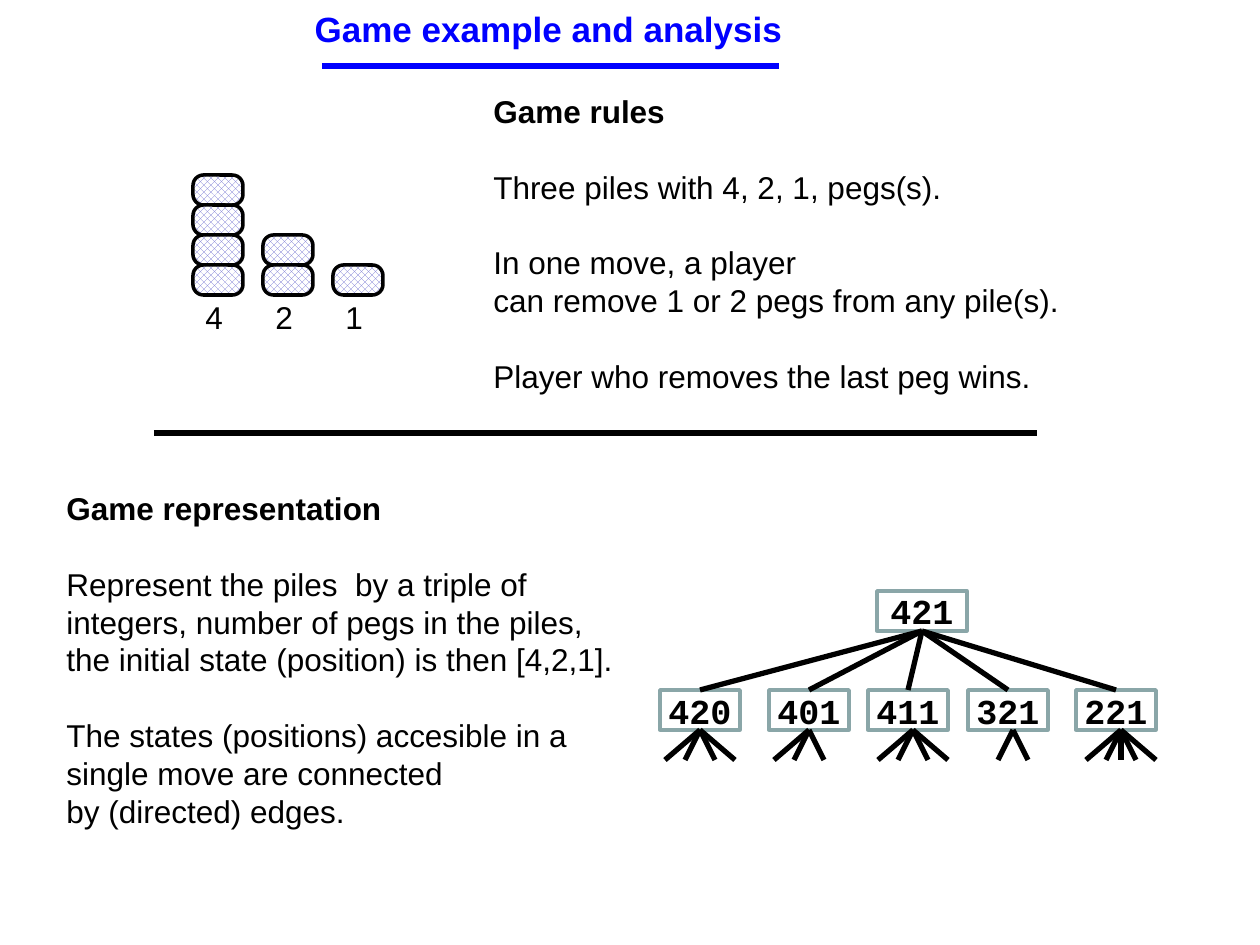
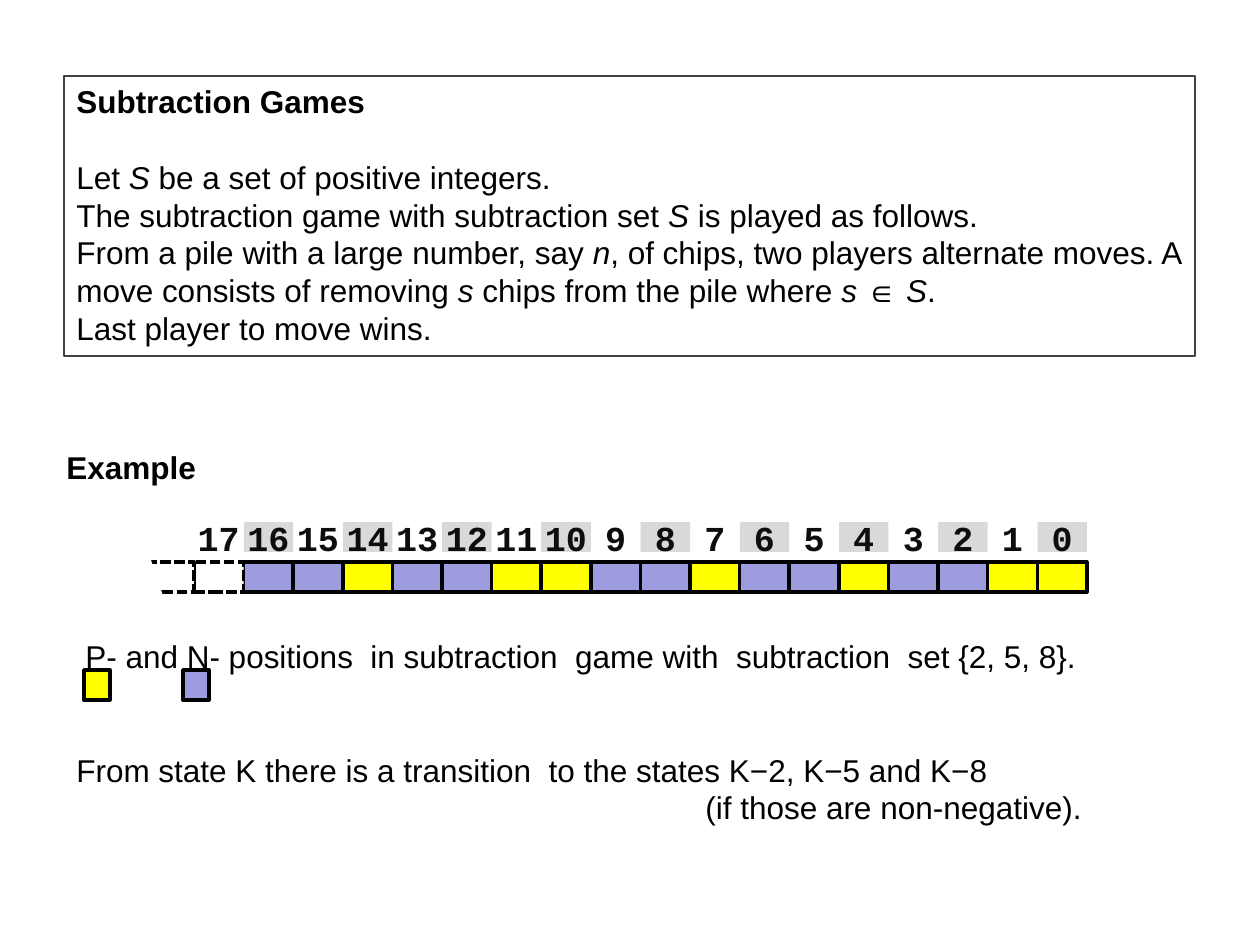
import dataclasses
import pptx
import pptx.dml.color
import pptx.enum.dml
import pptx.enum.shapes
import pptx.enum.text
import pptx.oxml
import pptx.oxml.ns
import pptx.util

SHAPE = pptx.enum.shapes.MSO_SHAPE
ANCHOR = pptx.enum.text.MSO_ANCHOR
ALIGN = pptx.enum.text.PP_ALIGN


@dataclasses.dataclass(frozen=True)
class Theme:
    text_font: str = "Arial"
    number_font: str = "Courier New"
    body_size: int = 18
    title_size: int = 20
    number_size: int = 20
    leading: float = 1.2
    ink: str = "000000"
    paper: str = "FFFFFF"
    title: str = "0000FF"
    node_border: str = "8AA6A8"
    peg_hatch: str = "7575D1"
    frame: str = "404040"
    number: str = "0D0D0D"
    even_label: str = "D9D9D9"
    p_position: str = "FFFF00"
    n_position: str = "9C9CDF"
    rule_width: float = 3
    outline_width: float = 2
    frame_width: float = 0.75


@dataclasses.dataclass(frozen=True)
class Run:
    text: str
    bold: bool = False
    italic: bool = False


@dataclasses.dataclass(frozen=True)
class Paragraph:
    runs: tuple
    lines_before: int = 0
    indent: int = 0


THEME = Theme()
PX_PER_INCH = 126


def px(length):
    return pptx.util.Emu(round(length * 914400 / PX_PER_INCH))


def box_px(*lengths):
    return [px(length) for length in lengths]


def rgb(value):
    return pptx.dml.color.RGBColor.from_string(value)


def plain(text, lines_before=0, indent=0):
    return Paragraph((Run(text),), lines_before, indent)


def heading(text):
    return Paragraph((Run(text, bold=True),))


def style_run(run, font, size, color, bold=False, italic=False):
    run.font.name = font
    run.font.size = pptx.util.Pt(size)
    run.font.color.rgb = rgb(color)
    run.font.bold = bold
    run.font.italic = italic


def write(frame, paragraphs, size=THEME.body_size, color=THEME.ink):
    frame.word_wrap = True
    frame.auto_size = pptx.enum.text.MSO_AUTO_SIZE.NONE
    frame.vertical_anchor = ANCHOR.TOP
    frame.margin_left = frame.margin_right = pptx.util.Inches(0.1)
    frame.margin_top = frame.margin_bottom = pptx.util.Inches(0.05)
    line_height = size * THEME.leading
    for index, content in enumerate(paragraphs):
        paragraph = frame.add_paragraph() if index else frame.paragraphs[0]
        paragraph.alignment = ALIGN.LEFT
        paragraph.line_spacing = pptx.util.Pt(line_height)
        paragraph.space_before = pptx.util.Pt(line_height * content.lines_before)
        if content.indent:
            paragraph._p.get_or_add_pPr().set("marL", str(px(content.indent)))
        for part in content.runs:
            run = paragraph.add_run()
            run.text = part.text
            style_run(run, THEME.text_font, size, color, part.bold, part.italic)


def add_text(slide, box, paragraphs):
    write(slide.shapes.add_textbox(*box_px(*box)).text_frame, paragraphs)


def add_outlined(slide, kind, box, fill=None, line=None, width=THEME.outline_width):
    shape = slide.shapes.add_shape(kind, *box_px(*box))
    shape.shadow.inherit = False
    if fill:
        shape.fill.solid()
        shape.fill.fore_color.rgb = rgb(fill)
    else:
        shape.fill.background()
    if line:
        shape.line.color.rgb = rgb(line)
        shape.line.width = pptx.util.Pt(width)
    else:
        shape.line.fill.background()
    return shape


def add_number(slide, box, number, color, fill, line=None):
    shape = add_outlined(slide, SHAPE.RECTANGLE, box, fill, line)
    frame = shape.text_frame
    frame.margin_left = frame.margin_right = frame.margin_top = frame.margin_bottom = 0
    frame.vertical_anchor = ANCHOR.MIDDLE
    frame.paragraphs[0].alignment = ALIGN.CENTER
    run = frame.paragraphs[0].add_run()
    run.text = str(number)
    style_run(run, THEME.number_font, THEME.number_size, color, bold=True)


def add_rule(slide, start, end, color=THEME.ink):
    rule = slide.shapes.add_connector(
        pptx.enum.shapes.MSO_CONNECTOR.STRAIGHT, *box_px(*start, *end))
    rule.line.color.rgb = rgb(color)
    rule.line.width = pptx.util.Pt(THEME.rule_width)
    properties = rule._element.spPr
    properties.append(properties.makeelement(pptx.oxml.ns.qn("a:effectLst"), {}))


def add_title(slide, box, text):
    left, top, width, height = box
    title = slide.shapes.title
    title.left, title.top, title.width, title.height = box_px(*box)
    write(title.text_frame, [heading(text)], THEME.title_size, THEME.title)
    add_rule(slide, (left + 20, top + 65), (left + 477, top + 65), THEME.title)


def add_piles(slide, box, piles):
    left, top, width, height = box
    peg_width, peg_height, pitch = 50, 30, 70
    ground = top + height
    for column, pegs in enumerate(piles):
        pile_left = left + column * pitch
        for level in range(pegs, 0, -1):
            peg = add_outlined(
                slide, SHAPE.ROUNDED_RECTANGLE,
                (pile_left, ground - level * peg_height, peg_width, peg_height),
                line=THEME.ink)
            peg.adjustments[0] = 0.35
            peg.fill.patterned()
            peg.fill.pattern = pptx.enum.dml.MSO_PATTERN.from_xml("openDmnd")
            peg.fill.fore_color.rgb = rgb(THEME.peg_hatch)
            peg.fill.back_color.rgb = rgb(THEME.paper)
        add_text(slide, (pile_left, ground - 3, 44, 50), [plain(str(pegs))])


def add_game_tree(slide, box):
    left, top, width, height = box
    root_center, root_width, node_width, node_height = left + 262, 90, 80, 40
    row_top = top + 99
    root_bottom = top + node_height
    row_bottom = row_top + node_height
    outer, inner = (-35, 35), (-15, 15)
    states = [
        (420, 0, 0, outer + inner),
        (401, 109, 0, (-35,) + inner),
        (411, 208, 5, outer + inner),
        (321, 308, 5, inner),
        (221, 416, 5, outer + inner + (0,)),
    ]
    add_number(slide, (root_center - root_width // 2, top, root_width, node_height),
               421, THEME.ink, THEME.paper, THEME.node_border)
    for state, offset, _, _ in states:
        add_number(slide, (left + offset, row_top, node_width, node_height),
                   state, THEME.ink, THEME.paper, THEME.node_border)
    for _, offset, fork_shift, moves in states:
        center = left + offset + node_width // 2
        add_rule(slide, (root_center, root_bottom), (center, row_top))
        fork = center + fork_shift
        for move in moves:
            add_rule(slide, (fork, row_bottom), (fork + move, top + height))


def p_positions(subtraction_set, last):
    found = set()
    for state in range(last + 1):
        if not any(state - taken in found for taken in subtraction_set):
            found.add(state)
    return found


def add_position_strip(slide, box, subtraction_set, last):
    left, top, width, height = box
    cell_height = 30
    pitch = width / (last + 1)
    cell_top = top + height - cell_height
    winning = p_positions(subtraction_set, last)

    def cell_box(state, row_top):
        return left + (last - state) * pitch, row_top, pitch, cell_height

    for state in range(last + 1):
        fill = THEME.paper if state % 2 else THEME.even_label
        add_number(slide, cell_box(state, top), state, THEME.number, fill)
    for state in range(last):
        fill = THEME.p_position if state in winning else THEME.n_position
        add_outlined(slide, SHAPE.RECTANGLE, cell_box(state, cell_top), fill, THEME.ink)
    for state in (last, last + 1):
        cell = add_outlined(slide, SHAPE.RECTANGLE, cell_box(state, cell_top),
                            THEME.paper, THEME.ink)
        cell.line.dash_style = pptx.enum.dml.MSO_LINE.from_xml("sysDash")
    add_outlined(slide, SHAPE.ISOSCELES_TRIANGLE, (left - 71, cell_top - 20, 40, 59),
                 THEME.paper, THEME.paper)


def add_definition(slide, box):
    panel = add_outlined(slide, SHAPE.RECTANGLE, box, line=THEME.frame,
                         width=THEME.frame_width)
    write(panel.text_frame, [
        heading("Subtraction Games"),
        Paragraph((Run("Let "), Run("S ", italic=True),
                   Run("be a set of positive integers.")), lines_before=1),
        Paragraph((Run("The subtraction game with subtraction set "),
                   Run("S ", italic=True), Run("is played as follows."))),
        Paragraph((Run("From a pile with a large number, say "), Run("n", italic=True),
                   Run(", of chips, two players alternate moves. A move consists of removing "),
                   Run("s ", italic=True), Run("chips from the pile where "),
                   Run("s ∈ S", italic=True), Run("."))),
        plain("Last player to move wins."),
    ])


def add_position_notes(slide, box):
    left, top, width, height = box
    add_text(slide, box, [
        plain("P- and N- positions  in subtraction  game with  subtraction  set {2, 5, 8}.",
              indent=9),
        plain("From state K there is a transition  to the states K−2, K−5 and K−8",
              lines_before=2),
        plain("(if those are non-negative).", indent=629),
    ])
    for offset, fill in ((20, THEME.p_position), (119, THEME.n_position)):
        add_outlined(slide, SHAPE.RECTANGLE, (left + offset, top + 39, 26, 30),
                     fill, THEME.ink)


def build_game_example(slide):
    add_title(slide, (302, 1, 596, 55), "Game example and analysis")
    add_piles(slide, (193, 175, 190, 120), (4, 2, 1))
    add_text(slide, (481, 86, 595, 318), [
        heading("Game rules"),
        plain("Three piles with 4, 2, 1, pegs(s).", 1),
        plain("In one move, a player", 1),
        plain("can remove 1 or 2 pegs from any pile(s)."),
        plain("Player who removes the last peg wins.", 1),
    ])
    add_rule(slide, (154, 433), (1037, 433))
    add_text(slide, (54, 483, 605, 394), [
        heading("Game representation"),
        plain("Represent the piles  by a triple of integers, number of pegs in the piles,", 1),
        plain("the initial state (position) is then [4,2,1]."),
        plain("The states (positions) accesible in a single move are connected", 1),
        plain("by (directed) edges."),
    ])
    add_game_tree(slide, (660, 591, 496, 169))


def build_subtraction_games(slide):
    add_definition(slide, (64, 76, 1131, 280))
    add_text(slide, (54, 442, 1131, 50), [heading("Example")])
    add_position_strip(slide, (194, 522, 893, 70), (2, 5, 8), 17)
    add_position_notes(slide, (64, 631, 1131, 242))


def main():
    presentation = pptx.Presentation()
    presentation.slide_width, presentation.slide_height = box_px(1260, 945)
    title_only, blank = presentation.slide_layouts[5], presentation.slide_layouts[6]
    build_game_example(presentation.slides.add_slide(title_only))
    build_subtraction_games(presentation.slides.add_slide(blank))
    presentation.save("out.pptx")


if __name__ == "__main__":
    main()
